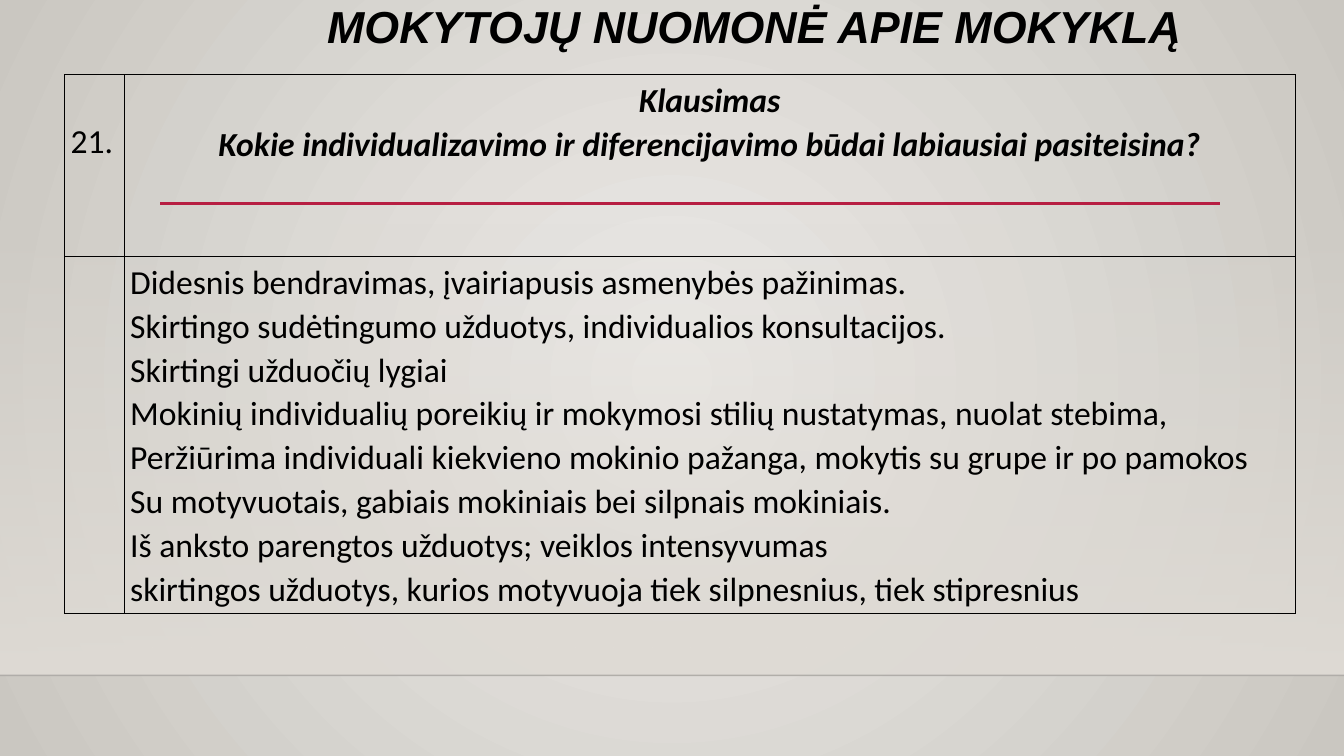
from lxml import etree
from pptx import Presentation
from pptx.dml import color as dml
from pptx.enum import shapes, text
from pptx.oxml import ns
from pptx.util import Cm, Pt

WIDE, HIGH = 33.87, 19.05
INK = "000000"
LINES = [
    "Didesnis bendravimas, įvairiapusis asmenybės pažinimas.",
    "Skirtingo sudėtingumo užduotys, individualios konsultacijos.",
    "Skirtingi užduočių lygiai",
    "Mokinių individualių poreikių ir mokymosi stilių nustatymas, nuolat stebima, "
    "Peržiūrima individuali kiekvieno mokinio pažanga, mokytis su grupe ir po pamokos",
    "Su motyvuotais, gabiais mokiniais bei silpnais mokiniais.",
    "Iš anksto parengtos užduotys; veiklos intensyvumas",
    "skirtingos užduotys, kurios motyvuoja tiek silpnesnius, tiek stipresnius",
]
HEAD = ["Klausimas",
        "Kokie individualizavimo ir diferencijavimo būdai labiausiai pasiteisina?"]


def tint(code):
    return dml.RGBColor.from_string(code)


def sub(node, tag, **attrs):
    return etree.SubElement(node, ns.qn(tag), attrs)


def write(frame, lines, size=24, font="Calibri", bold=False, center=False, space=1.07):
    for i, line in enumerate(lines):
        para = frame.paragraphs[0] if i == 0 else frame.add_paragraph()
        para.line_spacing = space
        para.alignment = text.PP_ALIGN.CENTER if center else text.PP_ALIGN.LEFT
        run = para.add_run()
        run.text = line
        run.font.size, run.font.name = Pt(size), font
        run.font.bold = run.font.italic = bold
        run.font.color.rgb = tint(INK)


def blend(fill, root, first, last):
    """Set a two-colour gradient and return its element without direction."""
    fill.gradient()
    for stop, code in zip(fill.gradient_stops, (first, last)):
        stop.color.rgb = tint(code)
    grad = root.xpath(".//a:gradFill")[0]
    for lin in grad.findall(ns.qn("a:lin")):
        grad.remove(lin)
    return grad


def rule(slide, x, y, width, code, weight, alpha=None):
    line = slide.shapes.add_connector(
        shapes.MSO_CONNECTOR.STRAIGHT, Cm(x), Cm(y), Cm(x + width), Cm(y))
    line.line.color.rgb, line.line.width = tint(code), Pt(weight)
    if alpha:
        sub(line.element.xpath(".//a:ln//a:srgbClr")[0], "a:alpha", val=alpha)
    sub(line.element.spPr, "a:effectLst")


def backdrop(slide, x, y, width, height):
    # Radial page colour
    grad = blend(slide.background.fill, slide.element, "ECEAE7", "CAC7C1")
    path = sub(grad, "a:path", path="circle")
    sub(path, "a:fillToRect", l="50000", t="50000", r="50000", b="50000")
    # Band fading in from the top, with its floor line
    floor = y + 17.02
    band = slide.shapes.add_shape(shapes.MSO_SHAPE.RECTANGLE, Cm(x), Cm(y + 5.61),
                                  Cm(width), Cm(floor - y - 5.61))
    band.shadow.inherit = False
    band.line.fill.background()
    grad = blend(band.fill, band.element, "DFDBD5", "DFDBD5")
    sub(grad.xpath(".//a:srgbClr")[0], "a:alpha", val="0")
    sub(grad, "a:lin", ang="5400000", scaled="0")
    rule(slide, x, floor, width, "000001", 1, "20000")
    # Red accent line
    rule(slide, x + 4.04, y + 5.13, width - 7.17, "B71E42", 2.5)


def title(slide, x, y, width, height):
    box = slide.shapes.add_textbox(Cm(x), Cm(y), Cm(width), Cm(height))
    box.text_frame.word_wrap = True
    write(box.text_frame, [" MOKYTOJŲ NUOMONĖ APIE MOKYKLĄ"],
          size=32, font="Arial", bold=True, center=True, space=0.9)


def edge(cell):
    props = cell._tc.get_or_add_tcPr()
    for i, side in enumerate(("a:lnL", "a:lnR", "a:lnT", "a:lnB")):
        line = etree.Element(ns.qn(side), w=str(Pt(1)))
        sub(sub(line, "a:solidFill"), "a:srgbClr", val=INK)
        props.insert(i, line)


def answers(slide, x, y, width, height):
    grid = slide.shapes.add_table(2, 2, Cm(x), Cm(y), Cm(width), Cm(height)).table
    grid.first_row = grid.horz_banding = False
    first, top = 1.5, 4.58
    for col, size in zip(grid.columns, (first, width - first)):
        col.width = Cm(size)
    for row, size in zip(grid.rows, (top, height - top)):
        row.height = Cm(size)
    for cell in grid.iter_cells():
        cell.fill.background()
        cell.margin_left = cell.margin_right = Cm(0.15)
        cell.margin_top = cell.margin_bottom = Cm(0.08)
        edge(cell)
    # The number stands level with the question
    grid.cell(0, 0).margin_top = Cm(1.12)
    write(grid.cell(0, 0).text_frame, ["21."])
    write(grid.cell(0, 1).text_frame, HEAD, bold=True, center=True)
    write(grid.cell(1, 1).text_frame, LINES)


def main():
    deck = Presentation()
    deck.slide_width, deck.slide_height = Cm(WIDE), Cm(HIGH)
    slide = deck.slides.add_slide(deck.slide_layouts[6])
    backdrop(slide, 0, 0, WIDE, HIGH)
    title(slide, 4.09, 0, 29.54, 2.62)
    answers(slide, 1.63, 1.88, 31.01, 13.57)
    deck.save("out.pptx")


if __name__ == "__main__":
    main()
